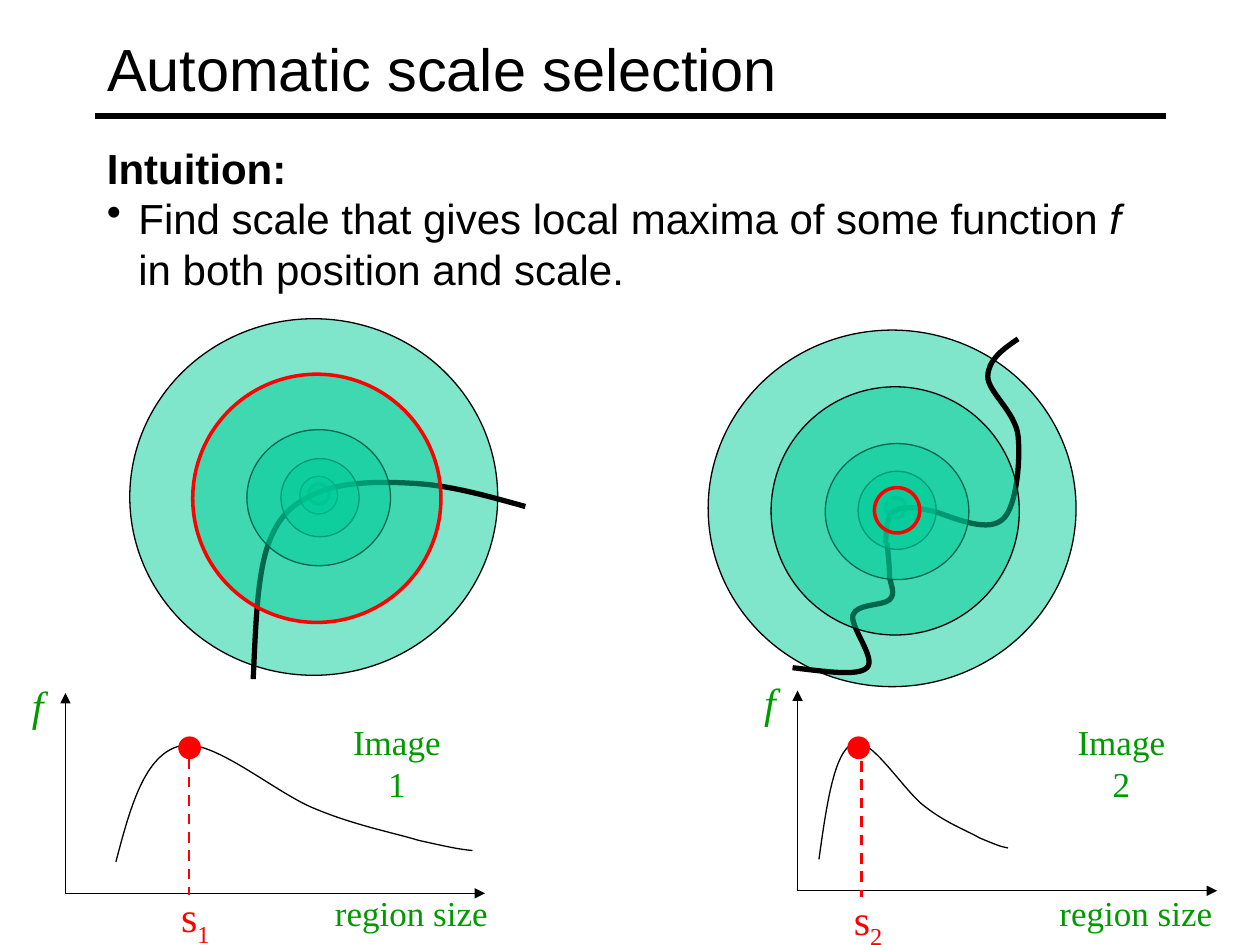
from dataclasses import dataclass

from lxml import etree
from pptx import Presentation
from pptx.dml.color import RGBColor
from pptx.enum import dml, shapes, text
from pptx.oxml.ns import qn
from pptx.util import Inches, Pt


@dataclass(frozen=True)
class Theme:
    ink: RGBColor = RGBColor(0, 0, 0)
    region: RGBColor = RGBColor(0x00, 0xCC, 0x99)
    peak: RGBColor = RGBColor(0xFF, 0, 0)
    label: RGBColor = RGBColor(0x00, 0x99, 0x00)
    sans: str = "Arial"
    serif: str = "Times New Roman"
    title: int = 34
    body: int = 24
    small: int = 20
    thin: float = 0.75
    ring: float = 2
    thick: float = 3


THEME = Theme()

# Regions: left, top, width, height; the first two lie behind the image edge
RINGS_1 = [(2.45, 3.84, 0.16, 0.16), (1.03, 2.53, 2.92, 2.83),
           (2.38, 3.78, 0.3, 0.3), (2.23, 3.64, 0.62, 0.62),
           (1.96, 3.41, 1.14, 1.08), (1.53, 2.97, 1.97, 1.97)]
RINGS_2 = [(7.03, 3.95, 0.16, 0.16), (5.62, 2.62, 2.92, 2.83),
           (6.81, 3.74, 0.62, 0.62), (6.55, 3.52, 1.14, 1.08),
           (6.12, 3.07, 1.97, 1.97), (6.94, 3.87, 0.36, 0.36)]

# Image edges: a start point, then three Bezier points per segment
EDGE_1 = [(2.01, 5.39), (2.03, 4.98), (2.04, 4.57), (2.13, 4.32),
          (2.22, 4.07), (2.35, 3.98), (2.55, 3.9),
          (2.75, 3.82), (3.06, 3.82), (3.33, 3.84),
          (3.6, 3.86), (3.88, 3.94), (4.17, 4.02)]
EDGE_2_UPPER = [(7.42, 4.06), (7.64, 4.14), (7.85, 4.22), (7.96, 4.12),
                (8.07, 4.02), (8.1, 3.65), (8.08, 3.46),
                (8.06, 3.27), (7.84, 3.11), (7.84, 2.99),
                (7.84, 2.86), (7.96, 2.77), (8.08, 2.69)]
EDGE_2_LOWER = [(6.29, 5.3), (6.55, 5.33), (6.81, 5.37), (6.88, 5.3),
                (6.96, 5.23), (6.74, 4.97), (6.77, 4.88),
                (6.8, 4.79), (7.01, 4.81), (7.06, 4.76),
                (7.11, 4.71), (7.07, 4.65), (7.06, 4.58),
                (7.06, 4.5), (7.05, 4.41), (7.04, 4.31)]
EDGE_2_CENTRE = [(7.03, 4.31), (7.03, 4.24), (7.04, 4.16), (7.05, 4.12),
                 (7.07, 4.07), (7.09, 4.06), (7.13, 4.04),
                 (7.17, 4.03), (7.22, 4.03), (7.27, 4.03),
                 (7.32, 4.04), (7.37, 4.05), (7.42, 4.06)]

# Response of f: x as a share of the curve width, y in inches from its top
RESPONSE = [(0, 0.99), (0.04, 0.56), (0.08, 0.14), (0.18, 0.07),
            (0.27, 0), (0.45, 0.45), (0.56, 0.57),
            (0.67, 0.7), (0.78, 0.76), (0.85, 0.82),
            (0.93, 0.87), (0.96, 0.89), (1, 0.9)]


def style_font(font, size, color, name):
    font.size, font.name = Pt(size), name
    font.color.rgb = color


def add_line(slide, start, end, color, width, arrow=False, dash=False):
    line = slide.shapes.add_connector(
        shapes.MSO_CONNECTOR.STRAIGHT, *map(Inches, (*start, *end)))
    line.line.color.rgb, line.line.width = color, Pt(width)
    if dash:
        line.line.dash_style = dml.MSO_LINE.DASH
    properties = line._element.spPr
    if arrow:
        etree.SubElement(properties.find(qn("a:ln")), qn("a:tailEnd"), type="triangle")
    etree.SubElement(properties, qn("a:effectLst"))


def add_ellipse(slide, box, fill, line, width, alpha=None):
    ellipse = slide.shapes.add_shape(shapes.MSO_SHAPE.OVAL, *map(Inches, box))
    ellipse.shadow.inherit = False
    ellipse.fill.solid()
    ellipse.fill.fore_color.rgb = fill
    ellipse.line.color.rgb, ellipse.line.width = line, Pt(width)
    if alpha:
        color = ellipse._element.spPr.find(qn("a:solidFill"))[0]
        etree.SubElement(color, qn("a:alpha"), val=str(alpha * 1000))


def add_curve(slide, points, width):
    """Draw an open outline whose points form a chain of Bezier segments."""
    start, *rest = [tuple(map(Inches, point)) for point in points]
    builder = slide.shapes.build_freeform(*start)
    builder.add_line_segments(rest, close=False)
    curve = builder.convert_to_shape()
    curve.shadow.inherit = False
    curve.fill.background()
    curve.line.color.rgb, curve.line.width = THEME.ink, Pt(width)
    # Turn every three straight steps into one Bezier segment
    outline = next(curve._element.iter(qn("a:path")))
    steps = outline.findall(qn("a:lnTo"))
    for i in range(0, len(steps), 3):
        segment = etree.SubElement(outline, qn("a:cubicBezTo"))
        for step in steps[i:i + 3]:
            segment.append(step[0])
            outline.remove(step)


def add_label(slide, box, words, size, color, wrap=False):
    frame = slide.shapes.add_textbox(*map(Inches, box)).text_frame
    frame.word_wrap = wrap
    frame.auto_size = text.MSO_AUTO_SIZE.SHAPE_TO_FIT_TEXT
    frame.text = words
    label = frame.paragraphs[0]
    label.alignment = text.PP_ALIGN.CENTER
    style_font(label.runs[0].font, size, color, THEME.serif)
    return label


def add_heading(slide, left, top, width, height):
    title = slide.shapes.title
    title.left, title.top, title.width, title.height = map(
        Inches, (left, top, width, height))
    frame = title.text_frame
    frame.text = "Automatic scale selection"
    frame.vertical_anchor = text.MSO_ANCHOR.MIDDLE
    frame.paragraphs[0].alignment = text.PP_ALIGN.LEFT
    style_font(frame.paragraphs[0].runs[0].font, THEME.title, THEME.ink, THEME.sans)
    rule = top + height - 0.08
    add_line(slide, (left, rule), (left + width, rule), THEME.ink, THEME.thick)


def add_intuition(slide, *box):
    frame = slide.shapes.add_textbox(*map(Inches, box)).text_frame
    frame.word_wrap = True
    frame.auto_size = text.MSO_AUTO_SIZE.SHAPE_TO_FIT_TEXT
    frame.text = "Intuition:"
    intuition, goal = frame.paragraphs[0], frame.add_paragraph()
    properties = goal._p.get_or_add_pPr()
    properties.set("marL", str(Inches(0.25)))
    properties.set("indent", str(Inches(-0.25)))
    etree.SubElement(properties, qn("a:buChar"), char="•")
    for words in ("Find scale that gives local maxima of some function ",
                  "f ", "in both position and scale."):
        goal.add_run().text = words
    for run in (*intuition.runs, *goal.runs):
        style_font(run.font, THEME.body, THEME.ink, THEME.sans)
    intuition.runs[0].font.bold = True
    goal.runs[1].font.italic = True


def add_regions(slide, rings, edges, selected):
    """Concentric regions over an image edge, the selected one in red."""
    def add_ring(ring, color, width):
        add_ellipse(slide, ring, THEME.region, color, width, alpha=50)

    core, outer, *front = rings
    add_ring(core, THEME.ink, THEME.ring)
    add_ring(outer, THEME.ink, THEME.thin)
    for edge in edges:
        add_curve(slide, edge, THEME.thick)
    for ring in front:
        if ring == selected:
            add_ring(ring, THEME.peak, THEME.ring)
        else:
            add_ring(ring, THEME.ink, THEME.thin)


def add_graph(slide, left, top, caption, caption_left, curve_left, curve_width):
    origin = (left + 0.44, top + 1.75)
    for end in ((origin[0] + 3.33, origin[1]), (origin[0], top + 0.16)):
        add_line(slide, origin, end, THEME.ink, THEME.thin, arrow=True)
    f = add_label(slide, (left, top, 0.44, 0.5), "f", THEME.body, THEME.label, wrap=True)
    f.runs[0].font.italic = True
    add_label(slide, (caption_left, 7.03, 1.41, 0.43), "region size",
              THEME.small, THEME.label)
    add_label(slide, (caption_left + 0.04, 5.67, 1.1, 0.43), caption,
              THEME.small, THEME.label)
    response = [(curve_left + x * curve_width, top + 0.51 + y) for x, y in RESPONSE]
    add_curve(slide, response, THEME.thin)


def add_peak(slide, left, top, index, dot_left, drop):
    add_ellipse(slide, (dot_left, top, 0.17, 0.17), THEME.peak, THEME.peak, THEME.thin)
    stem = left + 0.17
    add_line(slide, (stem, top + drop), (stem, top + drop + 1.08),
             THEME.peak, 1.5, dash=True)
    scale = add_label(slide, (left, top + drop + 1, 0.44, 0.5), "s",
                      THEME.body, THEME.peak)
    subscript = scale.add_run()
    subscript.text = index
    style_font(subscript.font, THEME.body, THEME.peak, THEME.serif)
    subscript._r.get_or_add_rPr().set("baseline", "-25000")


def main():
    deck = Presentation()
    deck.slide_width, deck.slide_height = Inches(10), Inches(7.5)
    slide = deck.slides.add_slide(deck.slide_layouts.get_by_name("Title Only"))
    add_heading(slide, 0.75, 0.08, 8.5, 0.92)
    add_intuition(slide, 0.75, 1.08, 8.25, 1.31)

    # Regions in each image
    add_regions(slide, RINGS_1, [EDGE_1], RINGS_1[-1])
    add_regions(slide, RINGS_2, [EDGE_2_UPPER, EDGE_2_LOWER, EDGE_2_CENTRE], RINGS_2[-1])

    # Response of f in each image, with its peak
    add_graph(slide, 0.08, 5.34, "Image 1", 2.56, 0.92, 2.83)
    add_graph(slide, 5.89, 5.32, "Image 2", 8.31, 6.5, 1.5)
    add_peak(slide, 1.33, 5.85, "1", dot_left=1.42, drop=0.17)
    add_peak(slide, 6.67, 5.85, "2", dot_left=6.73, drop=0.19)
    deck.save("out.pptx")


if __name__ == "__main__":
    main()
